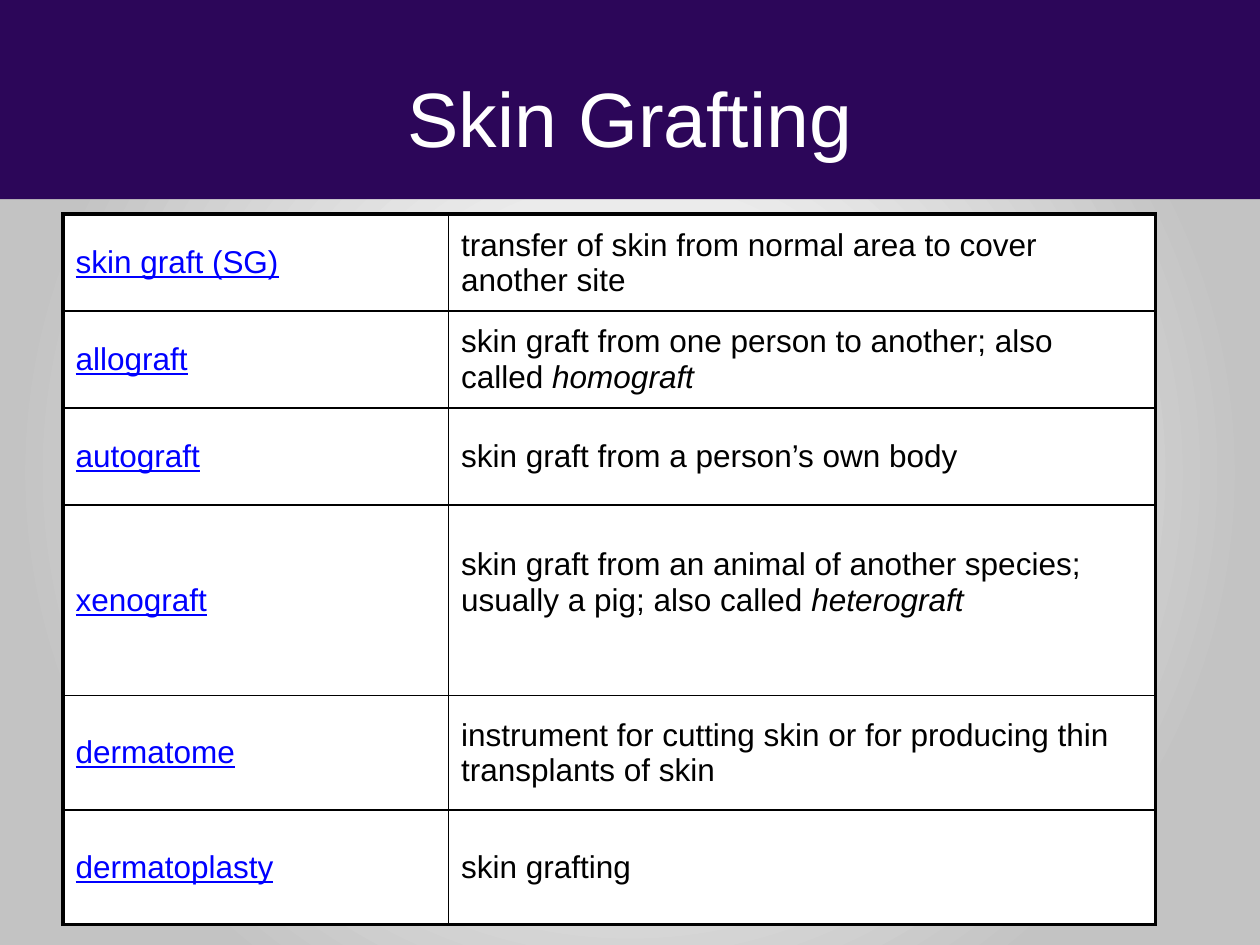
from pptx import Presentation
from pptx.dml.color import RGBColor
from pptx.enum.shapes import MSO_SHAPE
from pptx.enum.text import MSO_ANCHOR, PP_ALIGN
from pptx.oxml import parse_xml
from pptx.oxml.ns import nsdecls, qn
from pptx.util import Inches, Pt

RECT = MSO_SHAPE.RECTANGLE
MIDDLE = MSO_ANCHOR.MIDDLE
CENTER = PP_ALIGN.CENTER
WHITE = RGBColor(0xFF, 0xFF, 0xFF)
BLACK = RGBColor(0, 0, 0)
BLUE = RGBColor(0, 0, 0xFF)
PURPLE = RGBColor(0x2C, 0x06, 0x59)
FONT = "Arial"
THICK, THIN = Pt(2.25), Pt(1)

TITLE = "Skin Grafting"
TERMS = [
    ("skin graft (SG)", "transfer of skin from normal area to cover another site", "", 0.77),
    ("allograft", "skin graft from one person to another; also called ", "homograft", 0.77),
    ("autograft", "skin graft from a person’s own body", "", 0.77),
    ("xenograft", "skin graft from an animal of another species; usually a pig; also called ",
     "heterograft", 1.51),
    ("dermatome", "instrument for cutting skin or for producing thin transplants of skin", "", 0.91),
    ("dermatoplasty", "skin grafting", "", 0.91),
]
WIDTHS = (3.06, 5.61)
STOPS = [(2, "FFFFFF"), (35, "EBEBEB"), (79, "C3C3C3")]
LOW_INSET = {"xenograft": 0.33}


def paint_back(slide):
    slide.background.fill.gradient()
    old = slide.element.find(".//" + qn("a:gradFill"))
    stops = "".join(
        f'<a:gs pos="{pos * 1000}"><a:srgbClr val="{color}"/></a:gs>' for pos, color in STOPS
    )
    new = parse_xml(
        f'<a:gradFill {nsdecls("a")} rotWithShape="1"><a:gsLst>{stops}</a:gsLst>'
        '<a:path path="circle"><a:fillToRect l="50000" t="50000" r="50000" b="50000"/>'
        "</a:path></a:gradFill>"
    )
    old.getparent().replace(old, new)


def style(run, size, color):
    run.font.name = FONT
    run.font.size = Pt(size)
    run.font.color.rgb = color


def add_title(slide):
    band = slide.shapes.add_shape(RECT, 0, 0, Inches(10), Inches(1.58))
    band.shadow.inherit = False
    band.fill.solid()
    band.fill.fore_color.rgb = PURPLE
    band.line.fill.background()
    title = slide.shapes.title
    title.element.addprevious(band.element)
    title.left, title.top = Inches(0.5), Inches(0.3)
    title.width, title.height = Inches(9), Inches(1.25)
    frame = title.text_frame
    frame.text = TITLE
    frame.vertical_anchor = MIDDLE
    para = frame.paragraphs[0]
    para.alignment = CENTER
    style(para.runs[0], 44, WHITE)


def set_edges(cell, row, col):
    outer = {"L": col == 0, "R": col == len(WIDTHS) - 1,
             "T": row == 0, "B": row == len(TERMS) - 1}
    props = cell._tc.get_or_add_tcPr()
    for spot, (side, edge) in enumerate(outer.items()):
        width = THICK if edge else THIN
        props.insert(spot, parse_xml(
            f'<a:ln{side} {nsdecls("a")} w="{width}"><a:solidFill>'
            f'<a:srgbClr val="{BLACK}"/></a:solidFill></a:ln{side}>'
        ))


def fill_cell(cell, text, color):
    cell.fill.solid()
    cell.fill.fore_color.rgb = WHITE
    cell.vertical_anchor = MIDDLE
    para = cell.text_frame.paragraphs[0]
    para.text = text
    para.space_before = Pt(3.6)
    style(para.runs[0], 18, color)
    return para


def add_terms(slide):
    high = sum(term[-1] for term in TERMS)
    frame = slide.shapes.add_table(
        len(TERMS), len(WIDTHS), Inches(0.5), Inches(1.7), Inches(sum(WIDTHS)), Inches(high)
    )
    table = frame.table
    table.first_row = table.horz_banding = False
    for col, width in enumerate(WIDTHS):
        table.columns[col].width = Inches(width)
    for row, (name, text, alias, height) in enumerate(TERMS):
        table.rows[row].height = Inches(height)
        left, right = table.cell(row, 0), table.cell(row, 1)
        fill_cell(left, name, BLUE).runs[0].font.underline = True
        para = fill_cell(right, text, BLACK)
        right.margin_bottom = Inches(LOW_INSET.get(name, 0.05))
        if alias:
            run = para.add_run()
            run.text = alias
            style(run, 18, BLACK)
            run.font.italic = True
        for col, cell in enumerate((left, right)):
            set_edges(cell, row, col)


def main():
    deck = Presentation()
    deck.slide_width, deck.slide_height = Inches(10), Inches(7.5)
    slide = deck.slides.add_slide(deck.slide_layouts[5])
    paint_back(slide)
    add_title(slide)
    add_terms(slide)
    deck.save("out.pptx")


if __name__ == "__main__":
    main()
